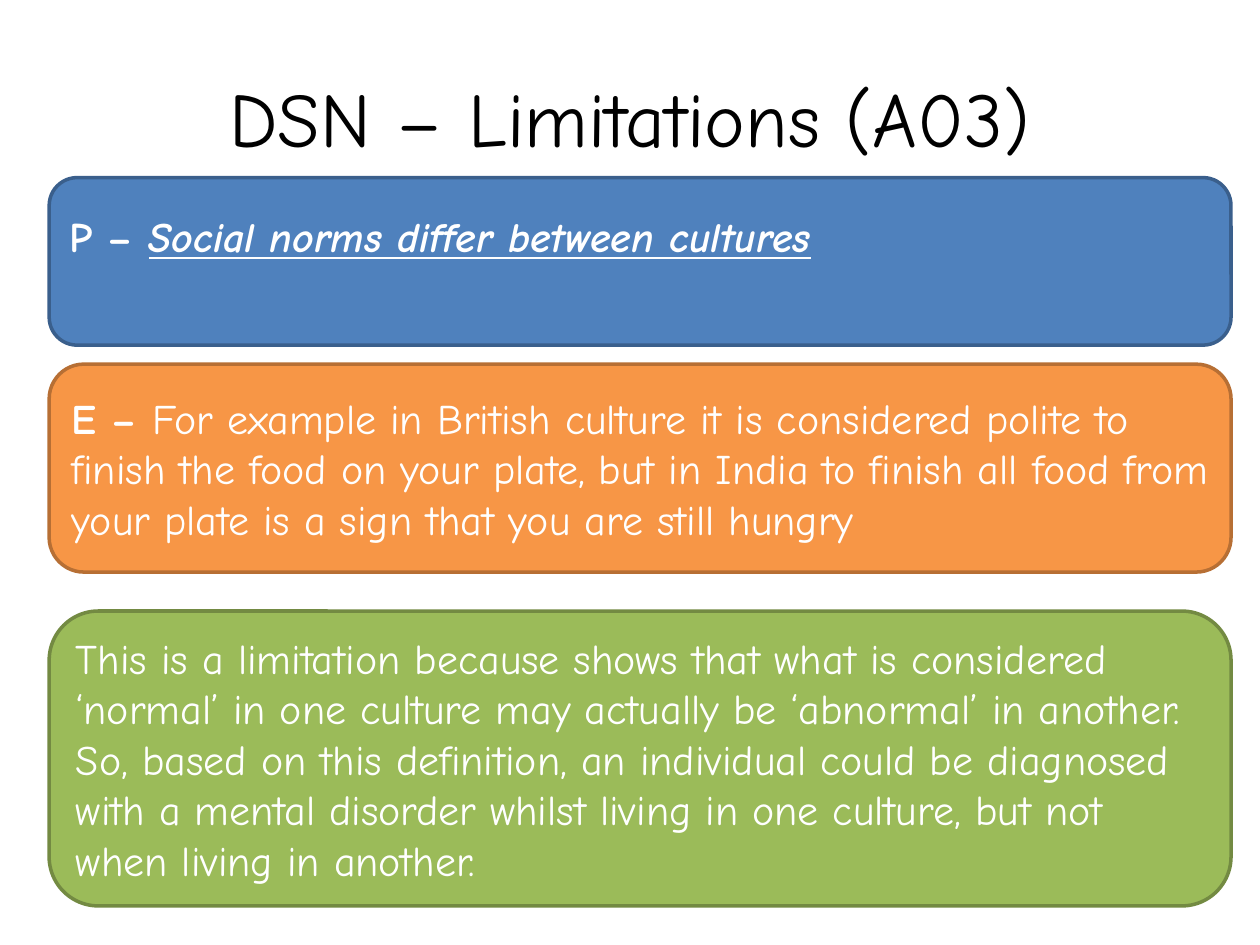
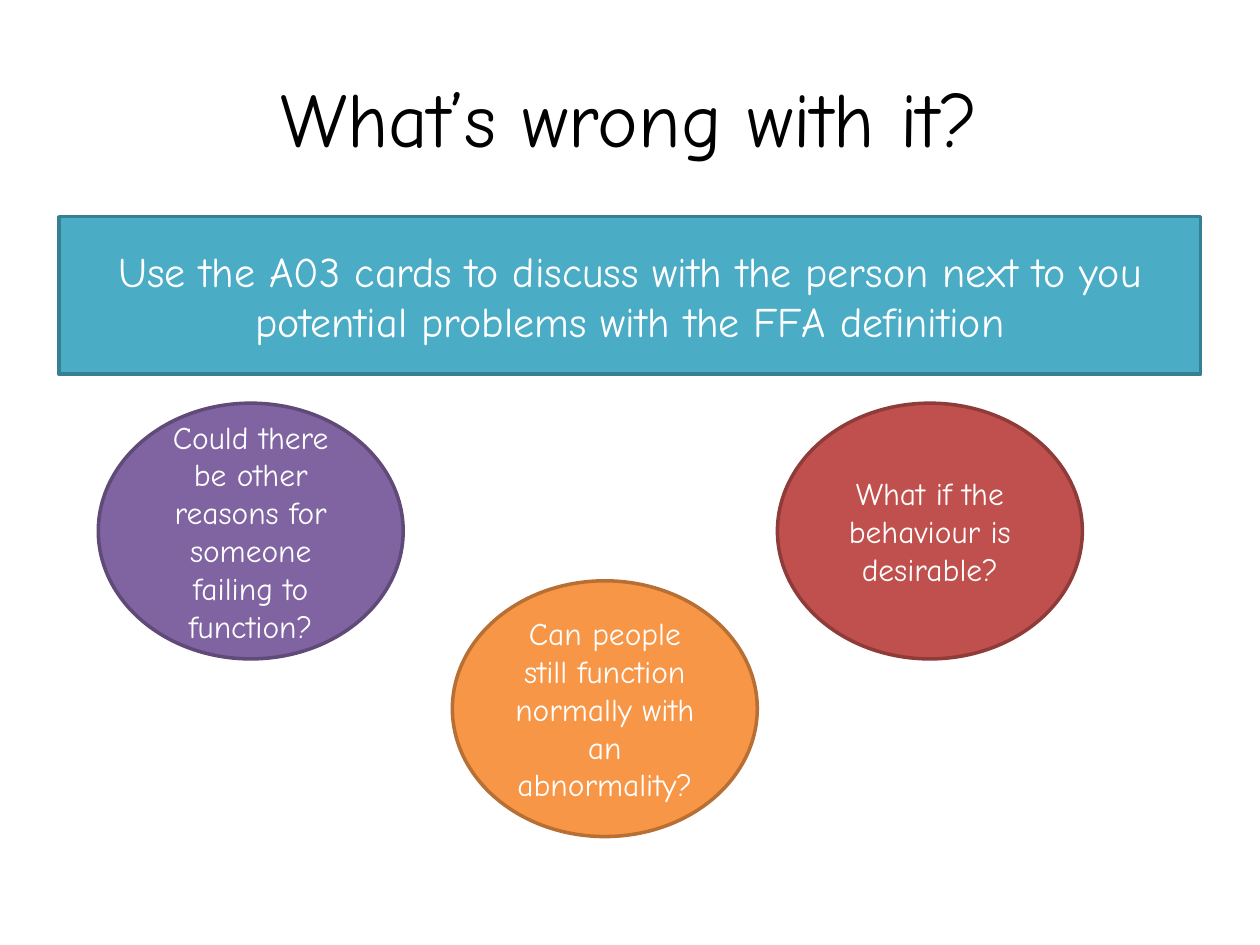
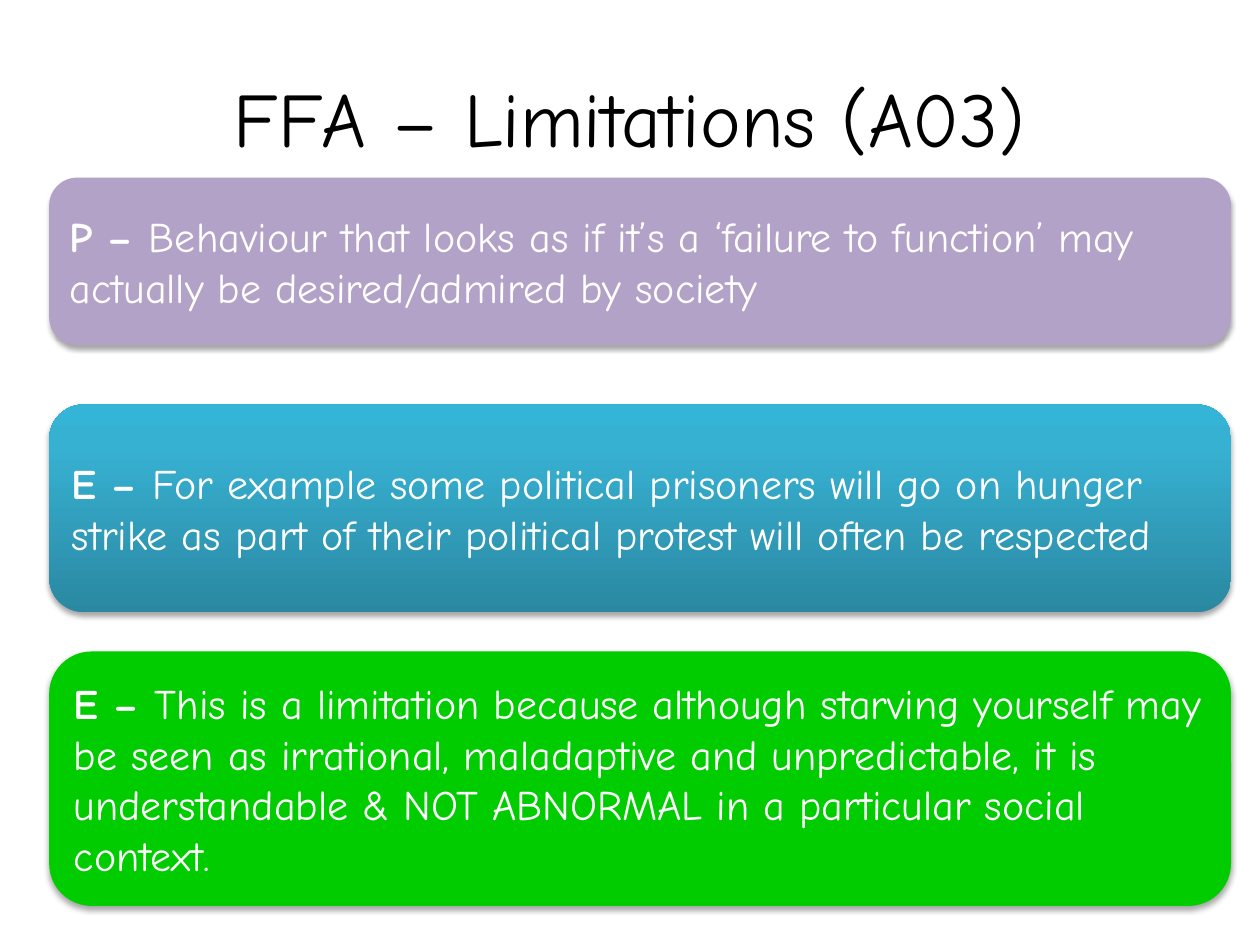
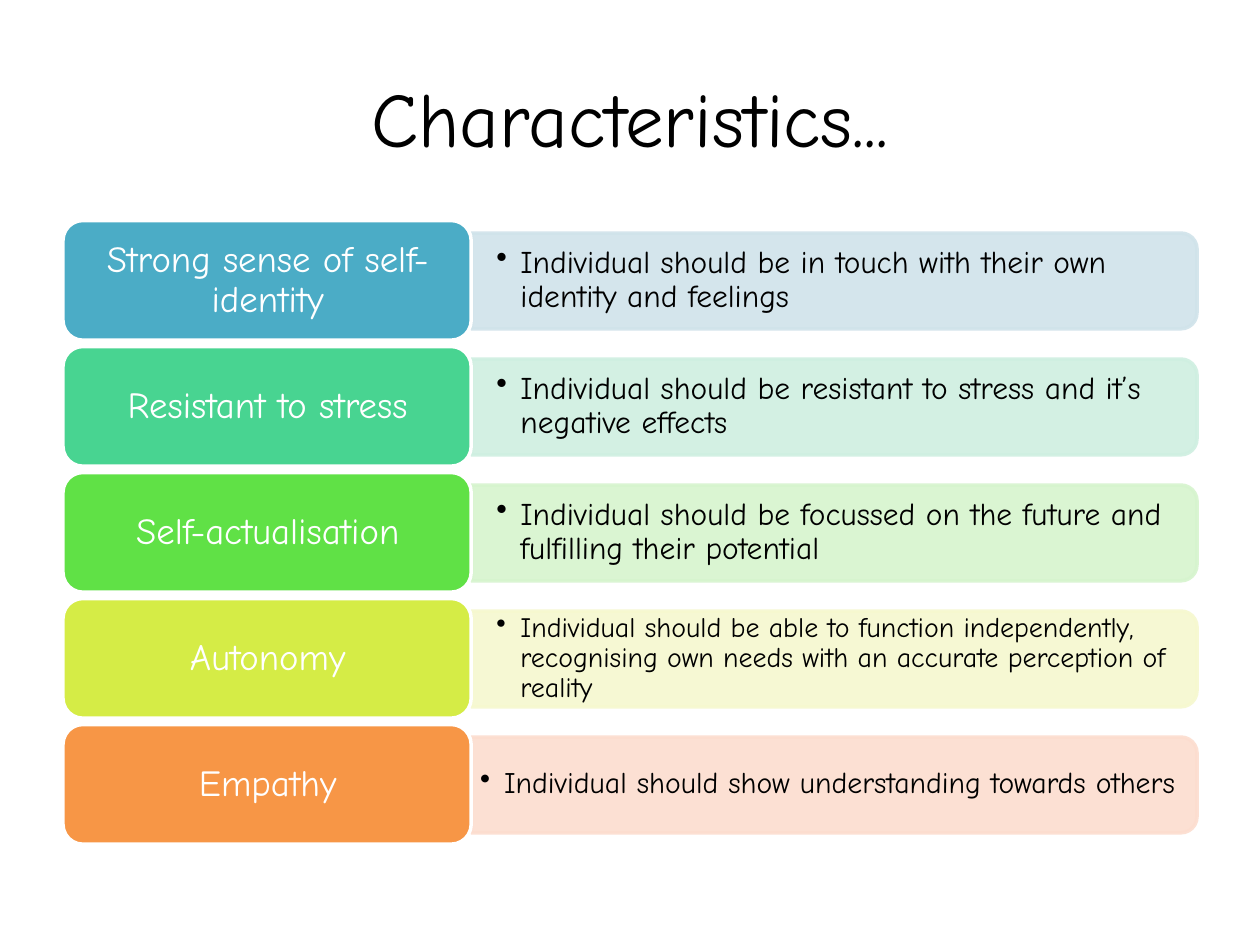
import copy
from dataclasses import dataclass
from typing import Any, Optional

import lxml.etree
import pptx
import pptx.dml.color
import pptx.enum.shapes
import pptx.enum.text
import pptx.oxml.ns
import pptx.util

Inches = pptx.util.Inches
Pt = pptx.util.Pt
qn = pptx.oxml.ns.qn
KIND = pptx.enum.shapes.MSO_SHAPE
ALIGN = pptx.enum.text.PP_ALIGN

# Shared look
FONT = "Comic Neue"
WHITE = "FFFFFF"
BLACK = "000000"
ORANGE = "F79646"
ORANGE_EDGE = "B76F34"
TEAL = "4BACC6"
TEAL_FADE = ((0, "2A88A2"), (0.8, "37B1D2"), (1, "34B4D6"))
INSETS = (0.1, 0.05, 0.1, 0.05)


@dataclass
class Run:
    text: str
    bold: bool = False
    slanted: bool = False  # italic and underlined


@dataclass
class Style:
    size: float
    color: str = WHITE
    align: Any = ALIGN.LEFT
    insets: tuple = INSETS
    spacing: Optional[float] = None
    bullet: bool = False


@dataclass
class Box:
    area: tuple  # left, top, width, height
    runs: list
    fill: Any  # one colour, or the stops of a fade
    edge: Optional[str] = None
    kind: Any = KIND.ROUNDED_RECTANGLE
    shadow: bool = False


@dataclass
class Trait:
    label: str
    detail: str
    fill: str
    tint: str
    size: float = 18
    insets: tuple = (0.2, 0.1, 0.2, 0.1)


def rgb(code: str) -> pptx.dml.color.RGBColor:
    return pptx.dml.color.RGBColor.from_string(code)


def add_text(shape: Any, runs: list, style: Style) -> None:
    """Write one paragraph, run by run, centred on the height."""
    frame = shape.text_frame
    frame.word_wrap = True
    frame.vertical_anchor = pptx.enum.text.MSO_ANCHOR.MIDDLE
    (frame.margin_left, frame.margin_top,
     frame.margin_right, frame.margin_bottom) = map(Inches, style.insets)
    para = frame.paragraphs[0]
    para.alignment = style.align
    if style.spacing:
        para.line_spacing = style.spacing
    if style.bullet:
        props = para._p.get_or_add_pPr()
        props.set("marL", str(Inches(0.19)))
        props.set("indent", str(Inches(-0.19)))
        lxml.etree.SubElement(props, qn("a:buChar")).set("char", "•")
    for item in runs:
        run = para.add_run()
        run.text = item.text
        font = run.font
        font.name, font.size = FONT, Pt(style.size)
        font.color.rgb = rgb(style.color)
        font.bold = item.bold
        font.italic = font.underline = item.slanted


def add_label(slide: Any, area: tuple, text: str, style: Style) -> None:
    add_text(slide.shapes.add_textbox(*map(Inches, area)), [Run(text)], style)


def add_fade(shape: Any, stops: tuple) -> None:
    """Fill from the bottom up with any number of colour stops."""
    shape.fill.gradient()
    shape.fill.gradient_angle = 90
    listing = shape._element.spPr.find(".//" + qn("a:gsLst"))
    while len(listing) < len(stops):
        listing.append(copy.deepcopy(listing[-1]))
    for stop, (place, color) in zip(shape.fill.gradient_stops, stops):
        stop.position = place
        stop.color.rgb = rgb(color)


def add_shadow(shape: Any) -> None:
    effects = shape._element.spPr.find(qn("a:effectLst"))
    outer = lxml.etree.SubElement(effects, qn("a:outerShdw"))
    for name, value in (("blurRad", Pt(3.1)), ("dist", Pt(1.8)),
                        ("dir", 5400000), ("rotWithShape", 0)):
        outer.set(name, str(int(value)))
    color = lxml.etree.SubElement(outer, qn("a:srgbClr"))
    color.set("val", BLACK)
    lxml.etree.SubElement(color, qn("a:alpha")).set("val", "35000")


def add_shape(slide: Any, kind: Any, area: tuple, fill: Any,
              edge: Optional[str]) -> Any:
    shape = slide.shapes.add_shape(kind, *map(Inches, area))
    shape.shadow.inherit = False
    if isinstance(fill, str):
        shape.fill.solid()
        shape.fill.fore_color.rgb = rgb(fill)
    else:
        add_fade(shape, fill)
    if edge:
        shape.line.color.rgb = rgb(edge)
        shape.line.width = Pt(2)
    else:
        shape.line.fill.background()
    return shape


def add_box(slide: Any, box: Box, style: Style) -> None:
    shape = add_shape(slide, box.kind, box.area, box.fill, box.edge)
    if box.shadow:
        add_shadow(shape)
    add_text(shape, box.runs, style)


def add_bar(slide: Any, area: tuple, tint: str) -> None:
    """Draw a see-through bar, rounded on the right by a quarter turn."""
    left, top, width, height = area
    shift = (width - height) / 2
    bar = add_shape(slide, KIND.ROUND_2_SAME_RECTANGLE,
                    (left + shift, top - shift, height, width), tint, tint)
    bar.rotation = 90
    for color in bar._element.spPr.iter(qn("a:srgbClr")):
        lxml.etree.SubElement(color, qn("a:alpha")).set("val", "90000")


def add_slide(deck: Any, title: str) -> Any:
    slide = deck.slides.add_slide(deck.slide_layouts[6])
    add_label(slide, (0.5, 0.3, 9, 1.25), title,
              Style(44, BLACK, ALIGN.CENTER))
    return slide


def panel(top: float, height: float, runs: list, fill: Any,
          edge: Optional[str] = None) -> Box:
    """Make a wide panel; those without an edge cast a shadow."""
    return Box((0.39, top, 9.38, height), runs, fill, edge,
               shadow=edge is None)


def oval(left: float, top: float, text: str, fill: str, edge: str) -> Box:
    return Box((left, top, 2.42, 2.03), [Run(text)], fill, edge, KIND.OVAL)


POINT = Run("P – ", bold=True)
PROOF = Run("E – ", bold=True)

NORMS = [
    panel(2.89, 1.65, [PROOF, Run(
        "For example in British culture it is considered polite to finish "
        "the food on your plate, but in India to finish all food from your "
        "plate is a sign that you are still hungry")], ORANGE, ORANGE_EDGE),
    panel(4.85, 2.34, [Run(
        "This is a limitation because shows that what is considered ‘normal’ "
        "in one culture may actually be ‘abnormal’ in another. So, based on "
        "this definition, an individual could be diagnosed with a mental "
        "disorder whilst living in one culture, but not when living in "
        "another.")], "9BBB59", "738A42"),
]
CLAIM = panel(1.41, 1.33, [
    POINT, Run("Social norms differ between cultures", True, True)],
    "4F81BD", "3A5F8C")

TASK = Box((0.47, 1.72, 9.06, 1.25), [Run(
    "Use the A03 cards to discuss with the person next to you potential "
    "problems with the FFA definition")], TEAL, "377F92", KIND.RECTANGLE)

HINTS = [
    oval(0.78, 3.2, "Could there be other reasons for someone failing to "
         "function?", "8064A2", "5F4A78"),
    oval(3.59, 4.61, "Can people still function normally with an "
         "abnormality?", ORANGE, ORANGE_EDGE),
    oval(6.17, 3.2, "What if the behaviour is desirable?",
         "C0504D", "8E3B39"),
]

FAILURE = [
    panel(1.41, 1.33, [POINT, Run(
        "Behaviour that looks as if it’s a ‘failure to function’ may "
        "actually be desired/admired by society")], "B3A2C7"),
    panel(3.21, 1.65, [PROOF, Run(
        "For example some political prisoners will go on hunger strike as "
        "part of their political protest will often be respected")],
        TEAL_FADE),
    panel(5.17, 2.02, [PROOF, Run(
        "This is a limitation because although starving yourself may be "
        "seen as irrational, maladaptive and unpredictable, it is "
        "understandable & NOT ABNORMAL in a particular social context.")],
        "00CC00"),
]

TRAITS = [
    Trait("Strong sense of self-identity",
          "Individual should be in touch with their own identity and "
          "feelings", TEAL, "D0E3EA"),
    Trait("Resistant to stress",
          "Individual should be resistant to stress and it’s negative "
          "effects", "48D491", "CFEFE1"),
    Trait("Self-actualisation",
          "Individual should be focussed on the future and fulfilling their "
          "potential", "60E146", "D6F4CE"),
    Trait("Autonomy",
          "Individual should be able to function independently, recognising "
          "own needs with an accurate perception of reality",
          "D5EC46", "F6F8CF", 16),
    Trait("Empathy", "Individual should show understanding towards others",
          ORANGE, "FCDDCF", 17, (0.07, 0.04, 0.07, 0.04)),
]


def add_trait(slide: Any, top: float, trait: Trait) -> None:
    """Draw one row: the bar with its detail, then the label."""
    add_bar(slide, (3.74, top + 0.1, 5.76, 0.76), trait.tint)
    add_label(slide, (3.74, top + 0.13, 5.72, 0.69), trait.detail,
              Style(trait.size, BLACK, insets=trait.insets, spacing=0.9,
                    bullet=True))
    add_shape(slide, KIND.ROUNDED_RECTANGLE, (0.5, top, 3.24, 0.95),
              trait.fill, WHITE)
    add_label(slide, (0.55, top + 0.05, 3.15, 0.86), trait.label,
              Style(21, align=ALIGN.CENTER, insets=(0.09, 0.04, 0.09, 0.04),
                    spacing=0.9))


def main() -> None:
    deck = pptx.Presentation()
    deck.slide_width, deck.slide_height = Inches(10), Inches(7.5)
    body = Style(24)

    # Limits of the social norms view; the claim sits above its middle
    slide = add_slide(deck, "DSN – Limitations (A03)")
    add_box(slide, CLAIM, Style(24, insets=(0.1, 0.05, 0.1, 0.45)))
    for box in NORMS:
        add_box(slide, box, body)

    # Task and hints
    slide = add_slide(deck, "What’s wrong with it?")
    add_box(slide, TASK, Style(24, align=ALIGN.CENTER))
    for box in HINTS:
        add_box(slide, box, Style(18, align=ALIGN.CENTER))

    # Limits of the failure to function view
    slide = add_slide(deck, "FFA – Limitations (A03)")
    for box in FAILURE:
        add_box(slide, box, body)

    # Traits, one row each inch
    slide = add_slide(deck, "Characteristics...")
    for row, trait in enumerate(TRAITS):
        add_trait(slide, 1.75 + row, trait)

    deck.save("out.pptx")


if __name__ == "__main__":
    main()
